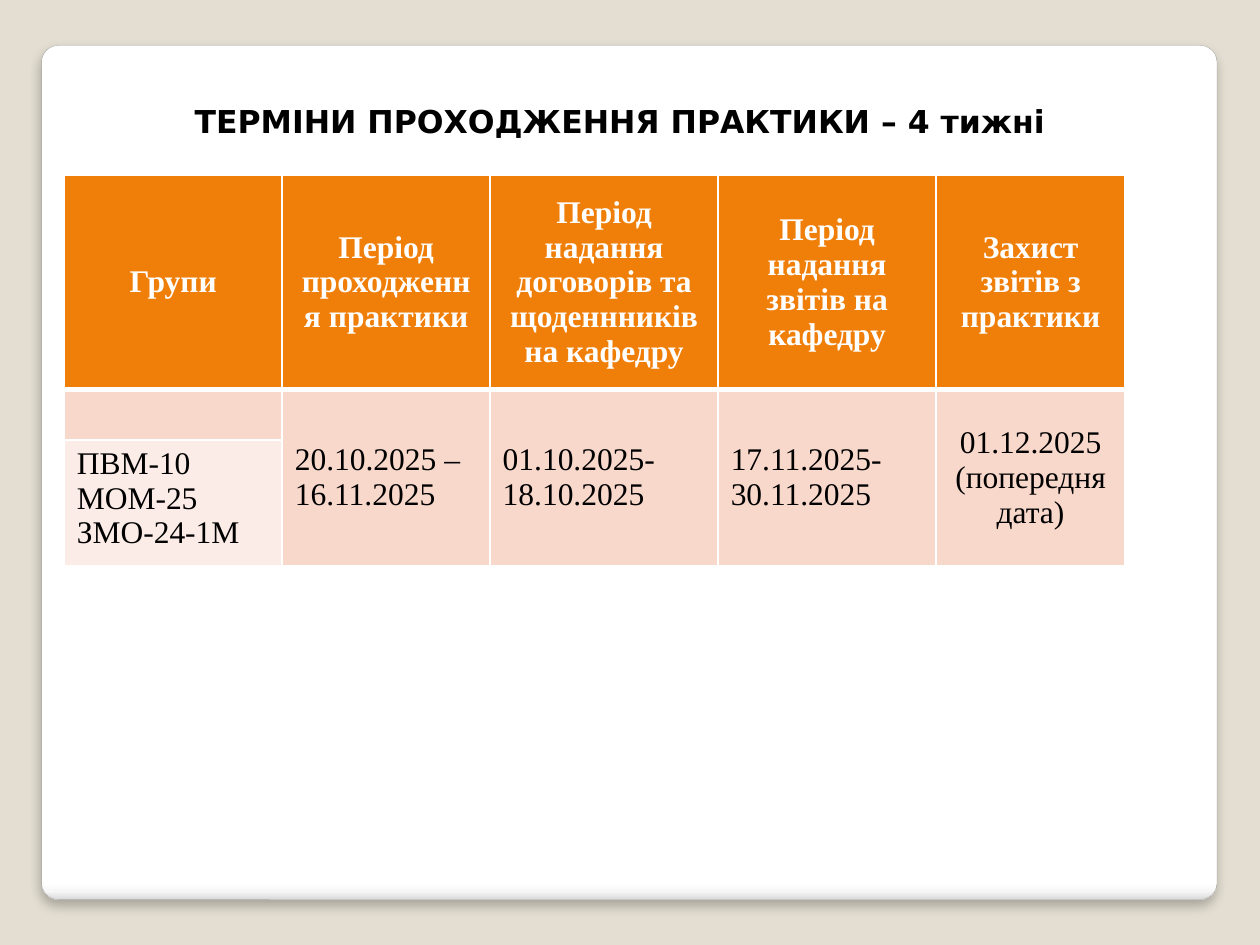
from lxml import etree
from pptx import Presentation
from pptx.dml.color import RGBColor
from pptx.enum import shapes, text
from pptx.oxml import parse_xml
from pptx.oxml.ns import nsdecls, qn
from pptx.util import Inches, Pt

BEIGE = RGBColor(0xE3, 0xDE, 0xD1)
GREY = RGBColor(0xA4, 0xA4, 0xA4)
ORANGE = RGBColor(0xF0, 0x7F, 0x09)
PINK = RGBColor(0xF9, 0xD8, 0xCC)
PALE_PINK = RGBColor(0xFC, 0xEC, 0xE7)
WHITE = RGBColor(0xFF, 0xFF, 0xFF)
BLACK = RGBColor(0, 0, 0)

PANEL_STOPS = [(0, "FFFFFF"), (98, "FFFFFF"), (99, "F7F7F7"), (100, "DADADA")]
COLUMN_WIDTHS = [1.73, 1.65, 1.81, 1.73, 1.5]
ROW_HEIGHTS = [1.7, 0.4, 1]
HEADINGS = [
    "Групи",
    "Період проходження практики",
    "Період надання договорів та щоденнників на кафедру",
    "Період надання звітів на кафедру",
    "Захист звітів з практики",
]
DATES = [
    "20.10.2025 – 16.11.2025",
    "01.10.2025-18.10.2025",
    "17.11.2025-30.11.2025",
    "01.12.2025 (попередня дата)",
]
GROUPS = ["ПВМ-10", "МОМ-25", "ЗМО-24-1М"]


def write_lines(frame, lines, font_name, color, bold=False, centred=False):
    for index, line in enumerate(lines):
        para = frame.add_paragraph() if index else frame.paragraphs[0]
        para.alignment = text.PP_ALIGN.CENTER if centred else text.PP_ALIGN.LEFT
        span = para.add_run()
        span.text = line
        span.font.name = font_name
        span.font.size = Pt(18)
        span.font.bold = bold
        span.font.color.rgb = color


def add_panel(page, left, top, width, height):
    panel = page.shapes.add_shape(
        shapes.MSO_SHAPE.ROUNDED_RECTANGLE, left, top, width, height)
    panel.adjustments[0] = 0.02
    panel.line.color.rgb = GREY
    panel.line.width = Pt(0.16)
    panel.fill.gradient()
    panel.fill.gradient_angle = 270
    properties = panel._element.spPr
    stops = properties.find(".//" + qn("a:gsLst"))
    for stop in list(stops):
        stops.remove(stop)
    for position, color in PANEL_STOPS:
        stop = etree.SubElement(stops, qn("a:gs"), pos=str(position * 1000))
        etree.SubElement(stop, qn("a:srgbClr"), val=color)
    properties.append(parse_xml(
        f'<a:effectLst {nsdecls("a")}>'
        f'<a:outerShdw blurRad="{Pt(6)}" dist="{Pt(4)}" dir="5400000" rotWithShape="0">'
        '<a:srgbClr val="000000"><a:alpha val="25000"/></a:srgbClr>'
        '</a:outerShdw></a:effectLst>'))


def add_heading(page, left, top, width, height):
    box = page.shapes.add_textbox(left, top, width, height)
    frame = box.text_frame
    frame.word_wrap = True
    frame.auto_size = text.MSO_AUTO_SIZE.SHAPE_TO_FIT_TEXT
    write_lines(frame, ["ТЕРМІНИ ПРОХОДЖЕННЯ ПРАКТИКИ – 4 тижні"],
                "DejaVu Sans", BLACK, bold=True, centred=True)


def style_cell(cell, fill, top=1, bottom=1):
    properties = cell._tc.get_or_add_tcPr()
    for side, width in (("L", 1), ("R", 1), ("T", top), ("B", bottom)):
        properties.append(parse_xml(
            f'<a:ln{side} {nsdecls("a")} w="{Pt(width)}"><a:solidFill>'
            f'<a:srgbClr val="{WHITE}"/></a:solidFill></a:ln{side}>'))
    cell.fill.solid()
    cell.fill.fore_color.rgb = fill


def add_schedule(page, left, top, width, height):
    table = page.shapes.add_table(
        len(ROW_HEIGHTS), len(COLUMN_WIDTHS), left, top, width, height).table
    for column, size in zip(table.columns, COLUMN_WIDTHS):
        column.width = Inches(size)
    for row, size in zip(table.rows, ROW_HEIGHTS):
        row.height = Inches(size)

    for index, heading in enumerate(HEADINGS):
        header, upper, lower = (table.cell(row, index) for row in range(3))
        style_cell(header, ORANGE, bottom=3)
        style_cell(upper, PINK, top=3)
        style_cell(lower, PINK if index else PALE_PINK)
        header.vertical_anchor = text.MSO_ANCHOR.MIDDLE
        write_lines(header.text_frame, [heading], "Times New Roman", WHITE,
                    bold=True, centred=True)
        if index:
            upper.merge(lower)
            upper.vertical_anchor = text.MSO_ANCHOR.MIDDLE
            write_lines(upper.text_frame, [DATES[index - 1]], "Times New Roman",
                        BLACK, centred=index == len(DATES))
        else:
            write_lines(lower.text_frame, GROUPS, "Times New Roman", BLACK)


def main():
    deck = Presentation()
    deck.slide_width, deck.slide_height = Inches(10), Inches(7.5)
    page = deck.slides.add_slide(deck.slide_layouts[6])
    page.background.fill.solid()
    page.background.fill.fore_color.rgb = BEIGE
    add_panel(page, Inches(0.33), Inches(0.36), Inches(9.33), Inches(6.78))
    add_heading(page, Inches(0.51), Inches(0.76), Inches(8.82), Inches(0.4))
    add_schedule(page, Inches(0.51), Inches(1.39),
                 Inches(sum(COLUMN_WIDTHS)), Inches(sum(ROW_HEIGHTS)))
    deck.save("out.pptx")


if __name__ == "__main__":
    main()
